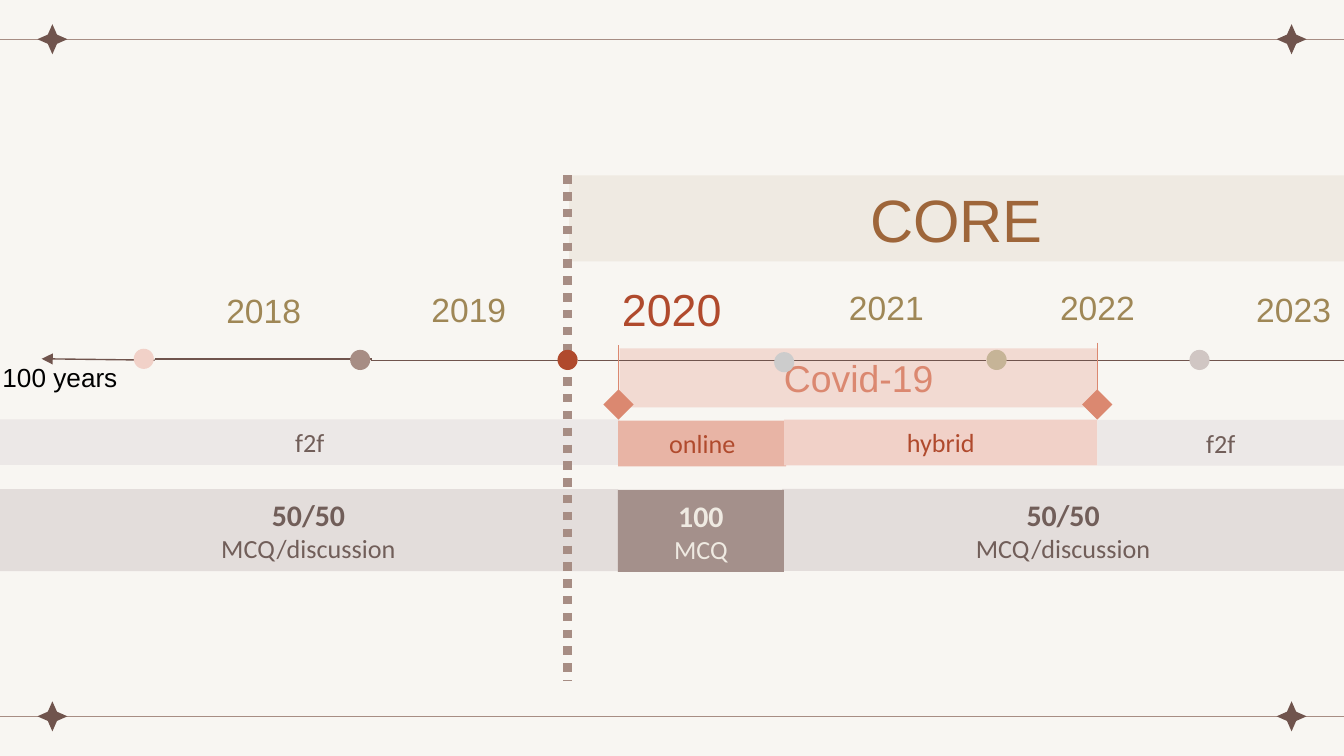
import pptx
import pptx.util
import pptx.dml.color
import pptx.enum.dml
import pptx.enum.shapes
import pptx.enum.text
import pptx.oxml.ns
import lxml.etree

Pt = pptx.util.Pt
RGB = pptx.dml.color.RGBColor
KIND = pptx.enum.shapes.MSO_SHAPE
ALIGN = pptx.enum.text.PP_ALIGN
qn = pptx.oxml.ns.qn

PAPER = RGB(0xF8, 0xF6, 0xF2)
DARK = RGB(0x70, 0x54, 0x4D)
TAUPE = RGB(0xA7, 0x8D, 0x84)
CREAM = RGB(0xEF, 0xEA, 0xE2)
BROWN = RGB(0x9E, 0x66, 0x3A)
STONE = RGB(0xE3, 0xDD, 0xDB)
MIST = RGB(0xEC, 0xE8, 0xE7)
TEXT = RGB(0x71, 0x5E, 0x59)
BLUSH = RGB(0xF1, 0xD1, 0xC8)
CORAL = RGB(0xDB, 0x88, 0x70)
ROSE = RGB(0xE8, 0xB4, 0xA5)
RUST = RGB(0xB0, 0x4A, 0x2D)
GOLD = RGB(0x9F, 0x87, 0x56)
GREY = RGB(0xCC, 0xCC, 0xCC)
SAND = RGB(0xC6, 0xB4, 0x97)
ASH = RGB(0xD0, 0xC6, 0xC3)
MUD = RGB(0xA4, 0x90, 0x8B)
BLACK = RGB(0, 0, 0)

# Widescreen slide, 16 by 9
deck = pptx.Presentation()
deck.slide_width = pptx.util.Inches(10)
deck.slide_height = deck.slide_width * 9 // 16
slide = deck.slides.add_slide(deck.slide_layouts[6])
slide.background.fill.solid()
slide.background.fill.fore_color.rgb = PAPER

# Square grid: 100 columns across the slide, rows of the same size
UNIT = deck.slide_width / 100


def box(kind, x, y, w, h, fill=None, rows=(), ink=TEXT, font="Calibri", align=ALIGN.CENTER):
    """Shape, or text box if kind is None; rows hold (text, size, bold)."""
    area = [round(n * UNIT) for n in (x, y, w, h)]
    if kind is None:
        item = slide.shapes.add_textbox(*area)
    else:
        item = slide.shapes.add_shape(kind, *area)
        item.shadow.inherit = False
        item.fill.solid()
        item.fill.fore_color.rgb = fill
        item.line.fill.background()
    frame = item.text_frame
    frame.word_wrap = True
    for i, (text, size, bold) in enumerate(rows):
        para = frame.add_paragraph() if i else frame.paragraphs[0]
        para.text = text
        para.alignment = align
        para.font.name = font
        para.font.size = Pt(size)
        para.font.bold = bold
        para.font.color.rgb = ink
    return item


def rule(x1, y1, x2, y2, ink=DARK, width=0.75):
    ends = [round(n * UNIT) for n in (x1, y1, x2, y2)]
    item = slide.shapes.add_connector(pptx.enum.shapes.MSO_CONNECTOR.STRAIGHT, *ends)
    item.line.color.rgb = ink
    item.line.width = Pt(width)
    lxml.etree.SubElement(item.element.spPr, qn("a:effectLst"))
    return item


# Frame: a rule with two stars at top and bottom
for y in (2.92, 53.3):
    rule(-0.1, y, 100.1, y, TAUPE)
    for x in (3.9, 96.1):
        star = box(KIND.STAR_4_POINT, x - 1.12, y - 1.12, 2.24, 2.24, DARK)
        star.adjustments[0] = 0.216

# Core banner and the bands left of 2020
split = [("50/50", 16, True), ("MCQ/discussion", 14, False)]
box(KIND.RECTANGLE, 42.35, 13.05, 57.65, 6.4, CREAM, [("CORE", 32, False)], BROWN, "Arial")
box(KIND.RECTANGLE, -0.1, 36.4, 46.1, 6.1, STONE, split)
box(KIND.RECTANGLE, 0, 31.2, 46.1, 3.4, MIST, [("f2f", 14, False)])

# Dotted divider and Covid-19 span
wall = rule(42.24, 13.05, 42.24, 50.7, TAUPE, 4.5)
wall.line.dash_style = pptx.enum.dml.MSO_LINE.ROUND_DOT
covid = box(KIND.RECTANGLE, 46.1, 25.92, 35.6, 4.4, BLUSH, [("Covid-19", 20, False)], CORAL, "Arial")
tint = covid.element.spPr.find(qn("a:solidFill"))[0]
lxml.etree.SubElement(tint, qn("a:alpha"), val="75000")

# Time axis, ending in an arrow to the past
back = rule(11.5, 26.8, 3.1, 26.7)
edge = back.element.spPr.find(qn("a:ln"))
lxml.etree.SubElement(edge, qn("a:tailEnd"), type="triangle")
rule(11.5, 26.72, 27.7, 26.72)
for start, end in ((27.6, 42.2), (43, 58), (58.5, 73.4), (74.2, 89.1), (89.4, 104.3)):
    rule(start, 26.83, end, 26.83)

# Dots on the axis
dots = [(9.95, 25.95, BLUSH), (26.05, 26.03, TAUPE), (41.48, 26.03, RUST),
        (57.6, 26.2, GREY), (73.4, 26.03, SAND), (88.5, 26.03, ASH)]
for x, y, hue in dots:
    box(KIND.OVAL, x, y, 1.5, 1.5, hue)

# Years
years = [("2018", 14.67, 21.1), ("2019", 29.93, 21.03), ("2020", 45.03, 20.5),
         ("2021", 61, 20.85), ("2022", 76.7, 20.85), ("2023", 91.3, 21.03)]
for year, x, y in years:
    size, high, ink = (24, 5, RUST) if year == "2020" else (18, 4, GOLD)
    box(None, x, y, 9.9, high, rows=[(year, size, False)], ink=ink, font="Arial")
box(None, -0.8, 26.43, 10.7, 3.4, rows=[("100 years", 14, False)], ink=BLACK,
    font="Arial", align=ALIGN.LEFT)

# Marks at both ends of the Covid-19 span
for x, top in ((46.03, 25.7), (81.65, 25.5)):
    gem = box(KIND.RECTANGLE, x - 0.8, 29.3, 1.6, 1.6, CORAL)
    gem.rotation = 315
    rule(x, top, x, top + 4.9, CORAL)

# Bands from 2020 on: teaching mode, then grading
modes = [("online", 46, 31.3, 12.5, ROSE, RUST),
         ("hybrid", 58.35, 31.23, 23.3, BLUSH, RUST),
         ("f2f", 81.65, 31.25, 18.35, MIST, TEXT)]
for text, x, y, w, hue, ink in modes:
    box(KIND.RECTANGLE, x, y, w, 3.4, hue, [(text, 14, False)], ink)
box(KIND.RECTANGLE, 58.2, 36.38, 41.8, 6.1, STONE, split)
box(KIND.RECTANGLE, 45.97, 36.45, 12.37, 6.1, MUD, [("100", 16, True), ("MCQ", 14, False)], CREAM)

deck.save("out.pptx")
